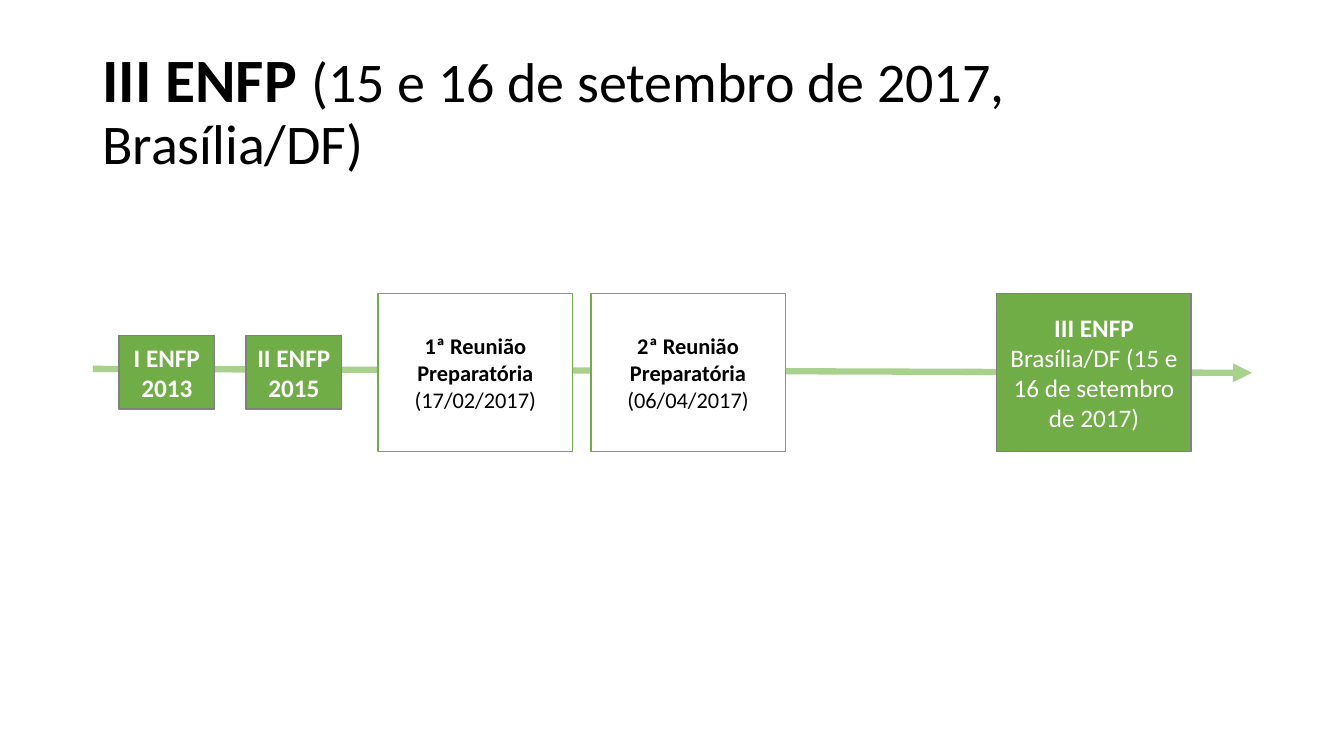
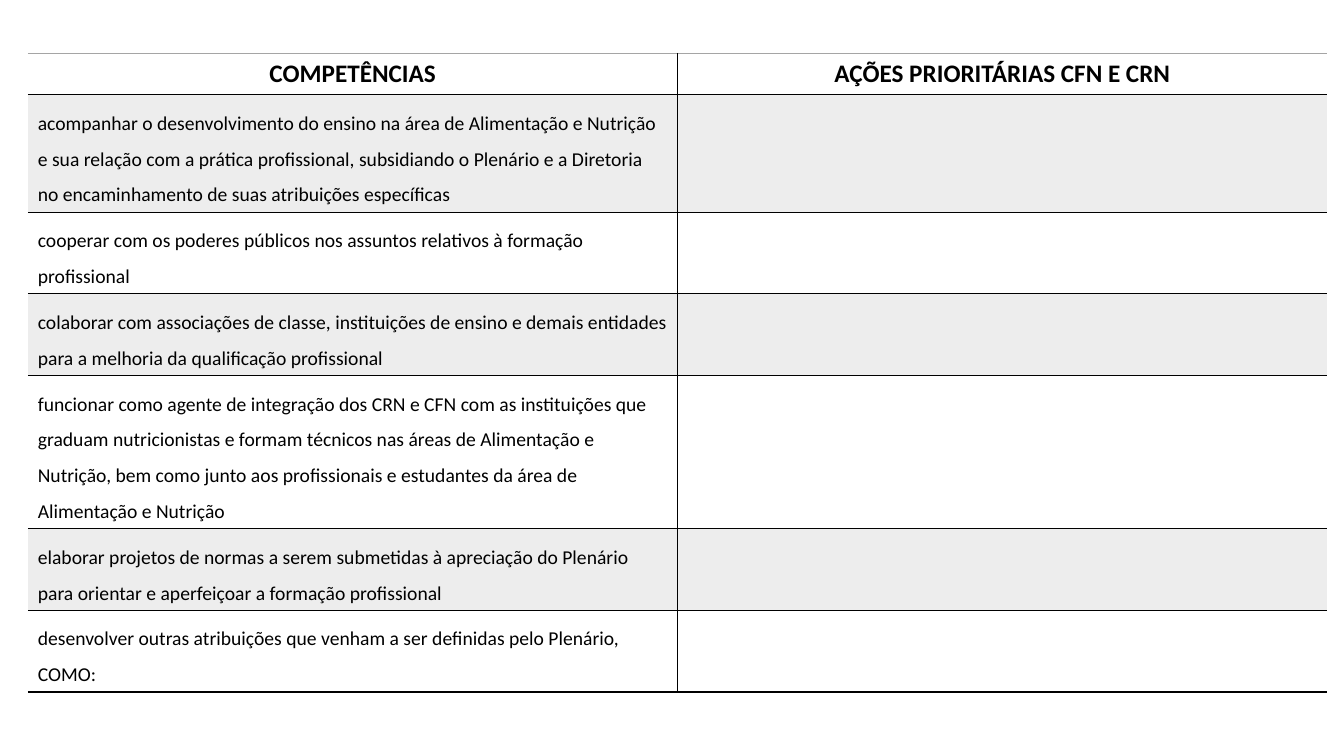
from lxml import etree
from pptx import Presentation
from pptx import util as u
from pptx.dml.color import RGBColor
from pptx.enum import shapes, text
from pptx.oxml import ns

FONT = "Calibri"
BLACK, WHITE = "000000", "FFFFFF"
GREEN, PALE_GREEN = "70AD47", "A9D18E"
GREY, RULE_GREY, BAND = "808080", "A5A5A5", "EDEDED"

MILESTONES = [
    (0.66, "small", [[("I ENFP", True)], [("2013", True)]]),
    (3.86, "small", [[("II ENFP", True)], [("2015", True)]]),
    (7.19, "meeting", [[("1ª Reunião Preparatória ", True), ("(17/02/2017)", False)]]),
    (12.55, "meeting", [[("2ª Reunião Preparatória ", True), ("(06/04/2017)", False)]]),
    (22.78, "main", [[("III ENFP", True)],
                     [("Brasília/DF (15 e 16 de setembro de 2017)", False)]]),
]
CARD_STYLES = {
    "small": (2.41, 1.85, GREEN, GREY, WHITE, 18),
    "meeting": (4.9, 3.99, WHITE, GREEN, BLACK, 16),
    "main": (4.9, 3.99, GREEN, GREY, WHITE, 18),
}

HEADINGS = ["COMPETÊNCIAS", "AÇÕES PRIORITÁRIAS CFN E CRN"]
COMPETENCIES = [
    ("acompanhar o desenvolvimento do ensino na área de Alimentação e Nutrição e sua "
     "relação com a prática profissional, subsidiando o Plenário e a Diretoria no "
     "encaminhamento de suas atribuições específicas", 3),
    ("cooperar com os poderes públicos nos assuntos relativos à formação profissional", 2),
    ("colaborar com associações de classe, instituições de ensino e demais entidades "
     "para a melhoria da qualificação profissional", 2),
    ("funcionar como agente de integração dos CRN e CFN com as instituições que graduam "
     "nutricionistas e formam técnicos nas áreas de Alimentação e Nutrição, bem como "
     "junto aos profissionais e estudantes da área de Alimentação e Nutrição", 4),
    ("elaborar projetos de normas a serem submetidas à apreciação do Plenário para "
     "orientar e aperfeiçoar a formação profissional", 2),
    ("desenvolver outras atribuições que venham a ser definidas pelo Plenário, COMO:", 2),
]
HEADER_HEIGHT, LINE_HEIGHT, CELL_PADDING = 1.04, 0.9, 0.25


def color(value):
    return RGBColor.from_string(value)


def add_run(paragraph, words, size, ink, bold=False):
    run = paragraph.add_run()
    run.text = words
    run.font.name = FONT
    run.font.size = u.Pt(size)
    run.font.bold = bold
    run.font.color.rgb = color(ink)


def add_title(slide, box, parts):
    frame = slide.shapes.add_textbox(*map(u.Cm, box)).text_frame
    frame.word_wrap = True
    frame.vertical_anchor = text.MSO_ANCHOR.MIDDLE
    paragraph = frame.paragraphs[0]
    paragraph.line_spacing = 0.9
    for words, size, bold in parts:
        add_run(paragraph, words, size, BLACK, bold)


def add_arrow(slide, start, end):
    arrow = slide.shapes.add_connector(
        shapes.MSO_CONNECTOR.STRAIGHT, *map(u.Cm, start + end))
    arrow.line.color.rgb = color(PALE_GREEN)
    arrow.line.width = u.Pt(4.5)
    etree.SubElement(arrow.line._get_or_add_ln(), ns.qn("a:tailEnd"), type="triangle")
    etree.SubElement(arrow._element.spPr, ns.qn("a:effectLst"))


def add_card(slide, left, middle, style, paragraphs):
    width, height, fill, line, ink, size = CARD_STYLES[style]
    card = slide.shapes.add_shape(
        shapes.MSO_SHAPE.RECTANGLE,
        *map(u.Cm, (left, middle - height / 2, width, height)))
    card.shadow.inherit = False
    card.fill.solid()
    card.fill.fore_color.rgb = color(fill)
    card.line.color.rgb = color(line)
    card.line.width = u.Pt(1)
    frame = card.text_frame
    frame.word_wrap = True
    frame.vertical_anchor = text.MSO_ANCHOR.MIDDLE
    for index, runs in enumerate(paragraphs):
        paragraph = frame.add_paragraph() if index else frame.paragraphs[0]
        paragraph.alignment = text.PP_ALIGN.CENTER
        for words, bold in runs:
            add_run(paragraph, words, size, ink, bold)


def add_timeline(slide, box):
    left, top, width, height = box
    middle = top + height / 2
    add_arrow(slide, (left, middle - 0.09), (left + width, middle + 0.01))
    for offset, style, paragraphs in MILESTONES:
        add_card(slide, left + offset, middle, style, paragraphs)


def set_borders(cell, **borders):
    properties = cell._tc.get_or_add_tcPr()
    for position, side in enumerate(("L", "R", "T", "B")):
        line = etree.Element(ns.qn("a:ln" + side), w=str(u.Pt(1)))
        ink = borders.get(side)
        if ink:
            fill = etree.SubElement(line, ns.qn("a:solidFill"))
            etree.SubElement(fill, ns.qn("a:srgbClr"), val=ink)
        else:
            etree.SubElement(line, ns.qn("a:noFill"))
        properties.insert(position, line)


def style_cell(cell, row, column):
    cell.vertical_anchor = text.MSO_ANCHOR.MIDDLE
    if row % 2:
        cell.fill.solid()
        cell.fill.fore_color.rgb = color(BAND)
    else:
        cell.fill.background()
    inner_side = "L" if column else "R"
    set_borders(cell, T=BLACK if row else RULE_GREY, B=BLACK, **{inner_side: BLACK})


def add_competency_table(slide, box):
    left, top, width = box
    heights = [HEADER_HEIGHT] + [
        lines * LINE_HEIGHT + CELL_PADDING for _, lines in COMPETENCIES]
    table = slide.shapes.add_table(
        len(heights), len(HEADINGS),
        *map(u.Cm, (left, top, width, sum(heights)))).table
    table.first_row = table.horz_banding = False
    for column in table.columns:
        column.width = u.Cm(width / len(HEADINGS))
    for row, height in enumerate(heights):
        table.rows[row].height = u.Cm(height)
        for column in range(len(HEADINGS)):
            style_cell(table.cell(row, column), row, column)
    for column, heading in enumerate(HEADINGS):
        paragraph = table.cell(0, column).text_frame.paragraphs[0]
        paragraph.alignment = text.PP_ALIGN.CENTER
        add_run(paragraph, heading, 18, BLACK, True)
    for row, (words, _) in enumerate(COMPETENCIES, 1):
        paragraph = table.cell(row, 0).text_frame.paragraphs[0]
        paragraph.line_spacing = 1.5
        add_run(paragraph, words, 14, BLACK)


def main():
    presentation = Presentation()
    presentation.slide_width = u.Cm(33.87)
    presentation.slide_height = u.Cm(19.05)
    blank = presentation.slide_layouts[6]

    timeline_slide = presentation.slides.add_slide(blank)
    add_title(timeline_slide, (2.33, 1.01, 30.02, 3.68), [
        ("III ENFP ", 44, True),
        ("(15 e 16 de setembro de 2017, Brasília/DF)", 40, False)])
    add_timeline(timeline_slide, (2.34, 7.39, 29.21, 3.99))

    table_slide = presentation.slides.add_slide(blank)
    add_competency_table(table_slide, (0.7, 1.35, 32.75))

    presentation.save("out.pptx")


if __name__ == "__main__":
    main()
